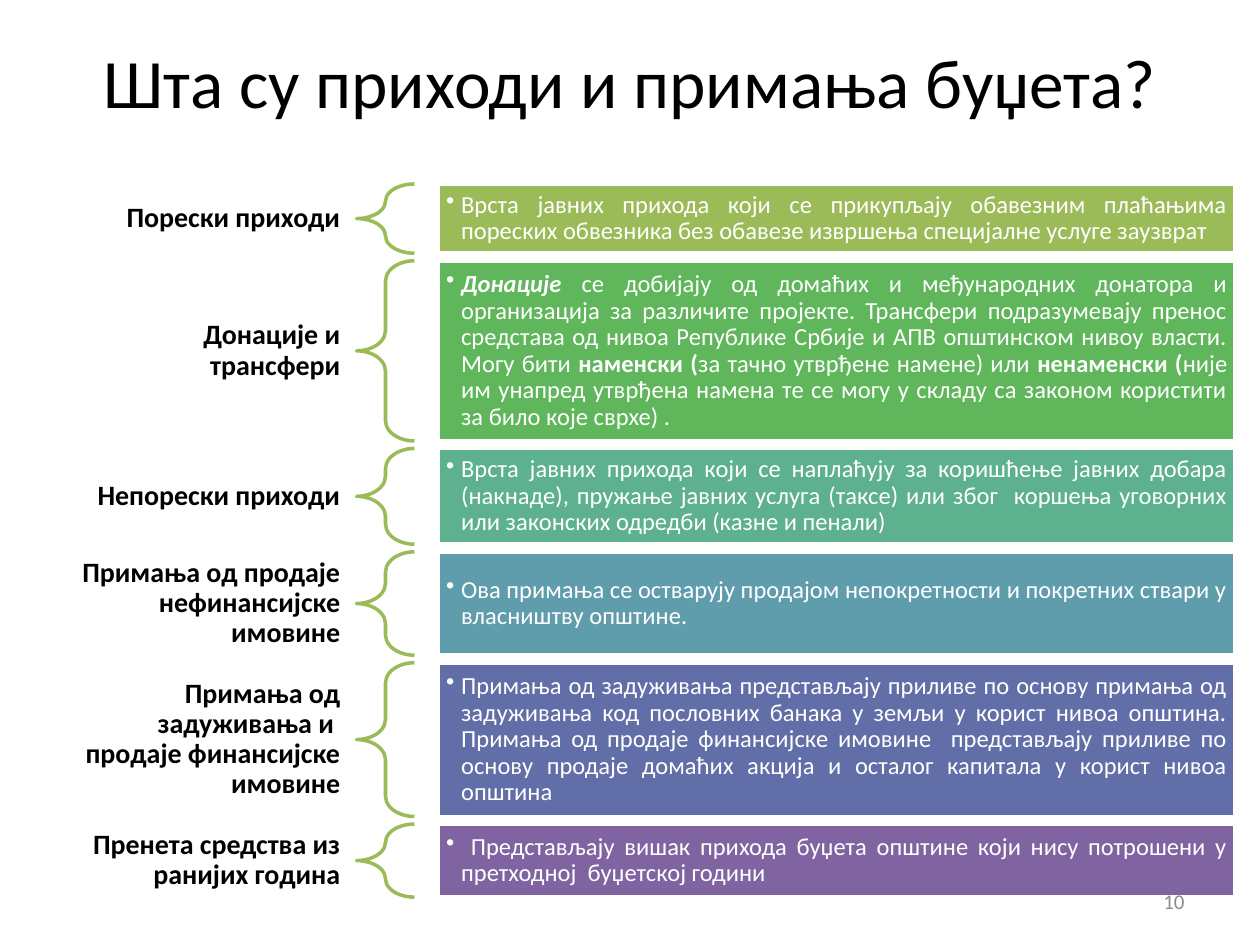
from dataclasses import dataclass

from lxml.etree import SubElement
from pptx import Presentation
from pptx.dml.color import RGBColor
from pptx.enum.shapes import MSO_SHAPE
from pptx.enum.text import MSO_ANCHOR, PP_ALIGN
from pptx.oxml.ns import qn
from pptx.util import Inches, Pt


@dataclass(frozen=True)
class Theme:
    font: str = "Calibri"
    ink: str = "000000"
    paper: str = "FFFFFF"
    brace: str = "9BBB59"
    muted: str = "8C8C8C"
    title_size: float = 39.6
    label_size: float = 16
    body_size: float = 14
    number_size: float = 12
    line_width: float = 2
    line_spacing: float = 0.9


class SlideBuilder:
    def __init__(self, slide, theme):
        self.slide = slide
        self.theme = theme

    def set_text(self, shape, runs, size, color, align, insets=(0.1, 0.05), spacing=None):
        """Fill a shape with one paragraph; runs are (text, style) pairs, style 'b', 'bi' or ''."""
        frame = shape.text_frame
        frame.word_wrap = True
        frame.vertical_anchor = MSO_ANCHOR.MIDDLE
        frame.margin_left = frame.margin_right = Inches(insets[0])
        frame.margin_top = frame.margin_bottom = Inches(insets[1])
        paragraph = frame.paragraphs[0]
        paragraph.alignment = align
        if spacing:
            paragraph.line_spacing = spacing
        for text, style in runs:
            run = paragraph.add_run()
            run.text = text
            run.font.name = self.theme.font
            run.font.size = Pt(size)
            run.font.color.rgb = RGBColor.from_string(color)
            run.font.bold = "b" in style
            run.font.italic = "i" in style
        return paragraph

    def text(self, box, runs, size, color, align, **layout):
        textbox = self.slide.shapes.add_textbox(*map(Inches, box))
        self.set_text(textbox, runs, size, color, align, **layout)

    def outlined(self, preset, box, line):
        shape = self.slide.shapes.add_shape(preset, *map(Inches, box))
        shape.shadow.inherit = False
        shape.line.color.rgb = RGBColor.from_string(line)
        shape.line.width = Pt(self.theme.line_width)
        return shape

    def label(self, box, words):
        self.text(box, [(words, "b")], self.theme.label_size, self.theme.ink,
                  PP_ALIGN.RIGHT, insets=(0.12, 0.04), spacing=self.theme.line_spacing)

    def brace(self, box):
        brace = self.outlined(MSO_SHAPE.LEFT_BRACE, box, self.theme.brace)
        brace.fill.background()
        brace.adjustments[0] = 0.35
        brace.adjustments[1] = 0.5

    def description(self, box, fill, runs):
        bar = self.outlined(MSO_SHAPE.RECTANGLE, box, self.theme.paper)
        bar.fill.solid()
        bar.fill.fore_color.rgb = RGBColor.from_string(fill)
        paragraph = self.set_text(bar, runs, self.theme.body_size, self.theme.paper,
                                  PP_ALIGN.JUSTIFY, insets=(0.06, 0.06),
                                  spacing=self.theme.line_spacing)
        # Hanging bullet
        properties = paragraph._p.get_or_add_pPr()
        properties.set("marL", str(Inches(0.12)))
        properties.set("indent", str(-Inches(0.12)))
        SubElement(properties, qn("a:buChar")).set("char", "•")


# Label, label height, row height, bar colour, description runs
REVENUES = [
    ("Порески приходи", 0.35, 0.55, "9BBB59", [
        ("Врста јавних прихода који се прикупљају обавезним плаћањима пореских "
         "обвезника без обавезе извршења специјалне услуге заузврат", "")]),
    ("Донације и трансфери", 0.58, 1.43, "5FB65B", [
        ("Донације ", "bi"),
        ("се добијају од домаћих и међународних донатора и организација за различите "
         "пројекте. Трансфери подразумевају пренос средстава од нивоа Републике Србије "
         "и АПВ општинском нивоу власти. Могу бити ", ""),
        ("наменски (", "b"),
        ("за тачно утврђене намене) или ", ""),
        ("ненаменски (", "b"),
        ("није им унапред утврђена намена те се могу у складу са законом користити "
         "за било које сврхе) .", "")]),
    ("Непорески приходи", 0.35, 0.76, "5DB18E", [
        ("Врста јавних прихода који се наплаћују за коришћење јавних добара (накнаде), "
         "пружање јавних услуга (таксе) или због  коршења уговорних или законских "
         "одредби (казне и пенали)", "")]),
    ("Примања од продаје нефинансијске имовине", 0.82, 0.82, "5F9DAC", [
        ("Ова примања се остварују продајом непокретности и покретних ствари у "
         "власништву општине.", "")]),
    ("Примања од задуживања и  продаје финансијске имовине", 1.08, 1.22, "626EA7", [
        ("Примања од задуживања представљају приливе по основу примања од задуживања "
         "код пословних банака у земљи у корист нивоа општина. Примања од продаје "
         "финансијске имовине  представљају приливе по основу продаје домаћих акција "
         "и осталог капитала у корист нивоа општина", "")]),
    ("Пренета средства из ранијих година", 0.58, 0.58, "8064A2", [
        (" Представљају вишак прихода буџета општине који нису потрошени у "
         "претходној  буџетској години", "")]),
]
FIRST_ROW_TOP = 1.46
ROW_GAP = 0.06


def main():
    presentation = Presentation()
    presentation.slide_width = Inches(10)
    presentation.slide_height = Inches(7.5)
    theme = Theme()
    builder = SlideBuilder(
        presentation.slides.add_slide(presentation.slide_layouts[6]), theme)

    # Title
    builder.text((0.5, 0.3, 9, 0.68), [("Шта су приходи и примања буџета?", "")],
                 theme.title_size, theme.ink, PP_ALIGN.CENTER)

    # Revenue rows: label, brace, description
    top = FIRST_ROW_TOP
    for name, label_height, height, color, runs in REVENUES:
        label_top = top + (height - label_height) / 2
        builder.label((0.5, label_top, 2.32, label_height), name)
        builder.brace((2.83, top, 0.46, height))
        builder.description((3.48, top, 6.32, height), color, runs)
        top += height + ROW_GAP

    # Slide number
    builder.text((7.17, 6.95, 2.33, 0.4), [("10", "")],
                 theme.number_size, theme.muted, PP_ALIGN.RIGHT)

    presentation.save("out.pptx")


if __name__ == "__main__":
    main()
